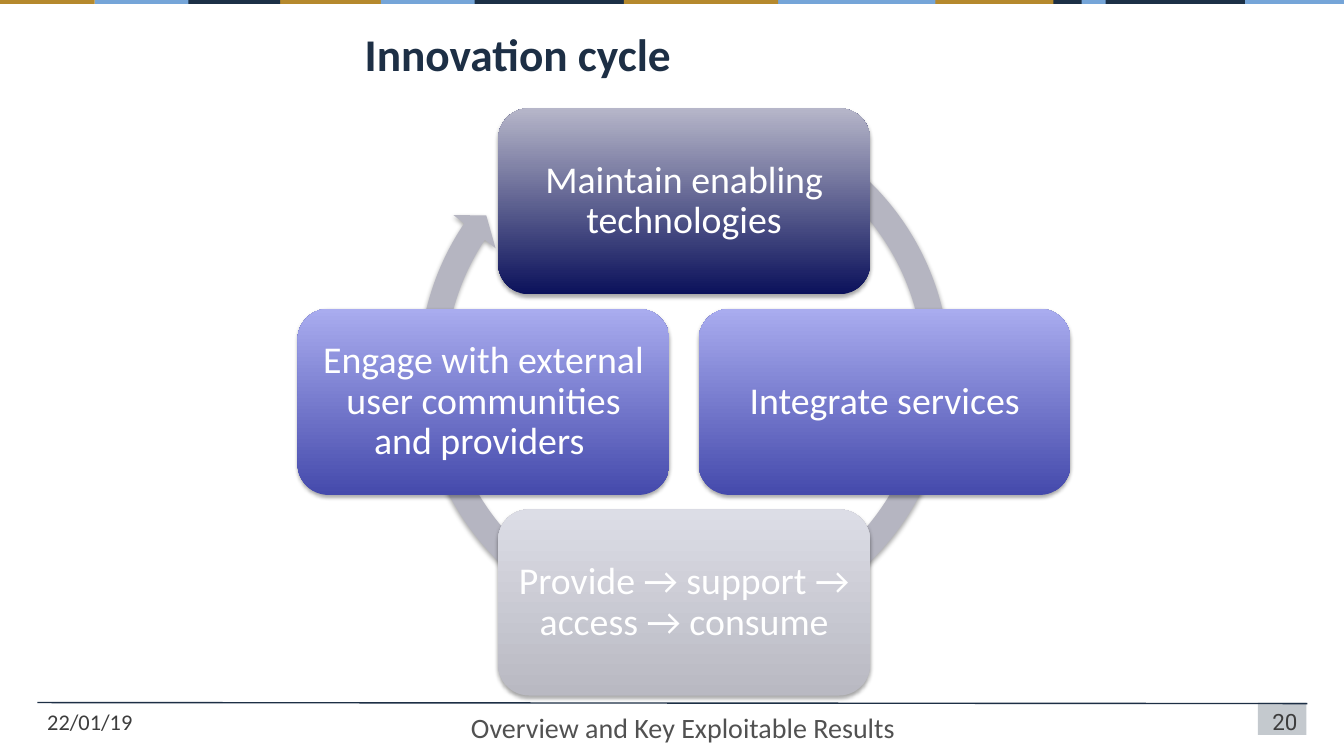
"""Build the innovation cycle slide on a grid of 80 columns by 45 rows."""
from dataclasses import dataclass
from typing import NamedTuple

from lxml.etree import SubElement as Sub
from pptx import Presentation
from pptx.dml.color import RGBColor as Rgb
from pptx.enum.shapes import MSO_CONNECTOR as Link, MSO_SHAPE as Kind
from pptx.enum.text import MSO_ANCHOR as Anchor, PP_ALIGN as Align
from pptx.oxml.ns import qn
from pptx.shapes.autoshape import Shape
from pptx.slide import Slide
from pptx.text.text import TextFrame
from pptx.util import Emu, Inches, Pt

COLS, ROWS = 80, 45
UNIT = Inches(1) / 6


@dataclass(frozen=True)
class Theme:
    """Colours, fonts and type sizes."""
    ink: str = "1D2F45"
    navy: str = "1C3046"
    gold: str = "B5892D"
    sky: str = "75A5D8"
    ring: str = "B5B5C1"
    dark: tuple[str, str] = ("0B115B", "B6B6C9")
    blue: tuple[str, str] = ("454AAC", "A9ACEF")
    pale: tuple[str, str] = ("B9B9C2", "DCDDE6")
    white: str = "FFFFFF"
    black: str = "000000"
    gray: str = "3D3D3D"
    soft: str = "515151"
    font: str = "Calibri"
    digit: str = "Roboto"
    title: float = 32.4
    card: float = 27
    foot: float = 20
    small: float = 16


THEME = Theme()


class Box(NamedTuple):
    """Left, top, width and height in grid units."""
    left: float
    top: float
    width: float
    height: float


class Stripe(NamedTuple):
    """One piece of the top band."""
    left: float
    width: float
    color: str


class Card(NamedTuple):
    """One step, placed in steps from the centre."""
    col: int
    row: int
    text: str
    fade: tuple[str, str]


class Label(NamedTuple):
    """One plain text box."""
    box: Box
    text: str
    size: float
    color: str
    font: str = THEME.font
    align: Align = Align.LEFT
    bold: bool = False


STRIPES = [
    Stripe(27.24, 9.9, THEME.navy),
    Stripe(51.96, 27.72, THEME.gold),
    Stripe(73.5, 6.5, THEME.sky),
    Stripe(16.68, 8.88, THEME.gold),
    Stripe(62.7, 11.4, THEME.navy),
    Stripe(45.66, 10.02, THEME.sky),
    Stripe(11.16, 5.52, THEME.navy),
    Stripe(5.64, 5.58, THEME.sky),
    Stripe(22.68, 5.58, THEME.sky),
    Stripe(37.14, 9.18, THEME.gold),
    Stripe(64.38, 1.44, THEME.sky),
    Stripe(0, 5.64, THEME.gold),
]
CARDS = [
    Card(0, -1, "Maintain enabling technologies", THEME.dark),
    Card(1, 0, "Integrate services", THEME.blue),
    Card(0, 1, "Provide → support → access → consume", THEME.pale),
    Card(-1, 0, "Engage with external user communities and providers ", THEME.blue),
]
LABELS = [
    Label(Box(21.12, 1.26, 56.7, 3.54), "Innovation cycle", THEME.title, THEME.ink, bold=True),
    Label(Box(2.22, 41.88, 18.66, 1.86), "22/01/19", THEME.small, THEME.gray),
    Label(Box(57.36, 41.88, 20.46, 1.86), "20", THEME.small, THEME.gray,
          THEME.digit, Align.RIGHT),
    Label(Box(22.98, 42, 35.34, 2.64), "Overview and Key Exploitable Results",
          THEME.foot, THEME.soft, align=Align.CENTER),
]
MID_X, MID_Y, STEP = 40.72, 23.92, 11.94
CARD_W, CARD_H = 22.14, 11.08
RING = Box(24.12, 5.52, 33.24, 33.24)
BEND = (0.047, 2.729, 128.251, 180.352, 0.048)
BADGE = Box(74.88, 41.82, 2.88, 1.92)


def grid(*cells: float) -> list[Emu]:
    """Turn grid units into lengths."""
    return [Emu(round(cell * UNIT)) for cell in cells]


def draw(slide: Slide, kind: Kind, box: Box, color: str) -> Shape:
    """Draw a plain filled shape."""
    shape = slide.shapes.add_shape(kind, *grid(*box))
    shape.shadow.inherit = False
    shape.line.fill.background()
    shape.fill.solid()
    shape.fill.fore_color.rgb = Rgb.from_string(color)
    return shape


def thin(color: object, share: int) -> None:
    """Set the opacity of a colour element in percent."""
    Sub(color, qn("a:alpha"), val=str(share * 1000))


def shade(shape: Shape) -> None:
    """Drop a soft shadow below a shape."""
    drop = Sub(shape.element.spPr.find(qn("a:effectLst")), qn("a:outerShdw"),
               blurRad=str(Pt(3.1)), dist=str(Pt(1.8)), dir="5400000", rotWithShape="0")
    thin(Sub(drop, qn("a:srgbClr"), val=THEME.black), 35)


def write(frame: TextFrame, text: str, size: float, color: str, font: str,
          align: Align, bold: bool = False) -> None:
    """Fill a frame with one styled paragraph."""
    frame.word_wrap = True
    frame.text = text
    para = frame.paragraphs[0]
    para.alignment = align
    face = para.runs[0].font
    face.name, face.size, face.bold = font, Pt(size), bold
    face.color.rgb = Rgb.from_string(color)


def add_card(slide: Slide, card: Card) -> None:
    """Draw one step of the cycle."""
    box = Box(MID_X + card.col * STEP - CARD_W / 2,
              MID_Y + card.row * STEP - CARD_H / 2, CARD_W, CARD_H)
    shape = draw(slide, Kind.ROUNDED_RECTANGLE, box, card.fade[0])
    shape.fill.gradient()
    shape.fill.gradient_angle = 90
    for stop, color, place in zip(shape.fill.gradient_stops, card.fade, (0, 1)):
        stop.color.rgb = Rgb.from_string(color)
        stop.position = place
    shade(shape)
    frame = shape.text_frame
    write(frame, card.text, THEME.card, THEME.white, THEME.font, Align.CENTER)
    frame.vertical_anchor = Anchor.MIDDLE
    frame.paragraphs[0].line_spacing = 0.9
    for side in ("left", "top", "right", "bottom"):
        setattr(frame, f"margin_{side}", Inches(0.11))


def add_label(slide: Slide, label: Label) -> None:
    """Place one plain text box."""
    frame = slide.shapes.add_textbox(*grid(*label.box)).text_frame
    write(frame, *label[1:])
    frame.vertical_anchor = Anchor.TOP


def add_frame(slide: Slide) -> None:
    """Draw the badge, the foot rule and the top band."""
    badge = draw(slide, Kind.RECTANGLE, BADGE, THEME.ink)
    thin(badge.element.spPr.find(qn("a:solidFill"))[0], 26)
    rule = slide.shapes.add_connector(Link.STRAIGHT, *grid(77.82, 41.88, 2.22, 41.82))
    rule.line.color.rgb = Rgb.from_string(THEME.ink)
    rule.line.width = Pt(1)
    Sub(rule.element.spPr, qn("a:effectLst"))
    for left, width, color in STRIPES:
        draw(slide, Kind.RECTANGLE, Box(left, 0, width, 0.24), color)


def main() -> None:
    """Build and save the deck."""
    deck = Presentation()
    deck.slide_width, deck.slide_height = grid(COLS, ROWS)
    slide = deck.slides.add_slide(deck.slide_layouts[6])
    add_frame(slide)
    ring = draw(slide, Kind.CIRCULAR_ARROW, RING, THEME.ring)
    for spot, bend in enumerate(BEND):
        ring.adjustments[spot] = bend
    shade(ring)
    for card in CARDS:
        add_card(slide, card)
    for label in LABELS:
        add_label(slide, label)
    deck.save("out.pptx")


if __name__ == "__main__":
    main()
